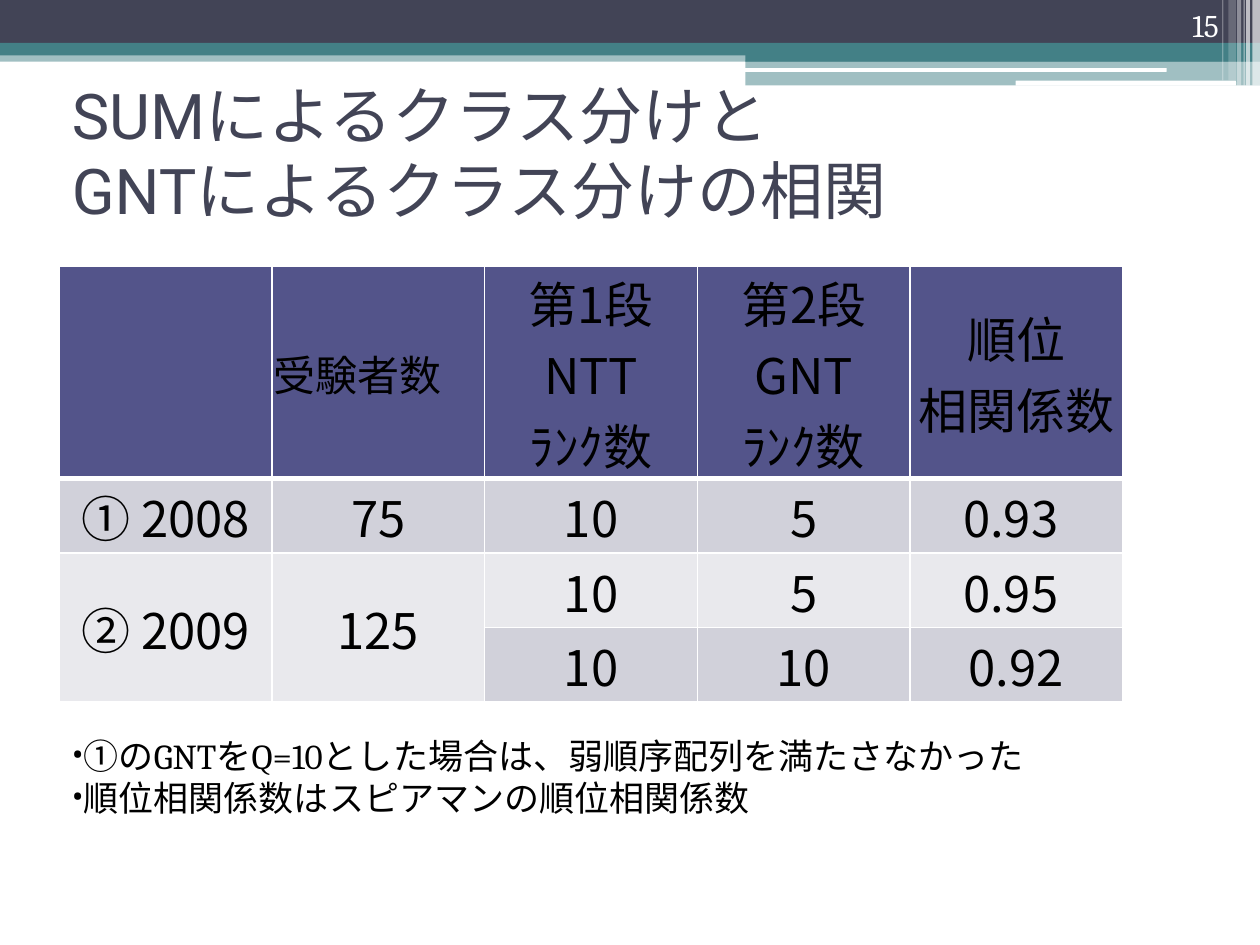
import pptx
import pptx.util
import pptx.dml.color
import pptx.enum.shapes
import pptx.enum.text
import pptx.oxml
import pptx.oxml.ns
import lxml.etree

Pt = pptx.util.Pt
RGBColor = pptx.dml.color.RGBColor
Shape = pptx.enum.shapes.MSO_SHAPE
Align = pptx.enum.text.PP_ALIGN
Anchor = pptx.enum.text.MSO_ANCHOR
qn = pptx.oxml.ns.qn

NAVY = RGBColor(0x42, 0x44, 0x56)
TEAL = RGBColor(0x43, 0x80, 0x86)
WHITE = RGBColor(0xFF, 0xFF, 0xFF)
BLACK = RGBColor(0, 0, 0)
HEADER = RGBColor(0x53, 0x54, 0x8A)
BAND_DARK = RGBColor(0xD1, 0xD1, 0xDA)
BAND_LIGHT = RGBColor(0xE9, 0xE9, 0xED)
ROW_FILLS = [HEADER, BAND_DARK, BAND_LIGHT, BAND_DARK]

TABLE_FONT = "Noto Sans CJK JP"
TITLE_FONT = "Roboto"
BODY_FONT = "Cambria"
EAST_ASIAN_FONTS = {TABLE_FONT: TABLE_FONT, TITLE_FONT: TITLE_FONT, BODY_FONT: TITLE_FONT}
ROW_HEIGHTS = [121.6, 42.5, 42.5, 42.5]
COLUMN_WIDTH = 121.5
CELLS = [
    ["", "受験者数\u3000", "第1段\nNTT\nﾗﾝｸ数", "第2段\nGNT\nﾗﾝｸ数", "順位\n相関係数"],
    ["① 2008", "75", "10", "5", "0.93 "],
    ["② 2009", "125", "10", "5", "0.95 "],
    ["", "", "10", "10", "0.92"],
]
BANDS = [
    (0, 28.8, 720, 6.5, TEAL, 50),
    (0, 0, 720, 24.5, NAVY, 100),
    (0, 24.5, 720, 7.2, TEAL, 100),
    (426, 28, 294, 7.2, TEAL, 100),
    (426, 34.5, 294, 14.4, TEAL, 50),
]
SLOTS = [(425.5, 38.9, 241.2, 2.2), (580.3, 46.1, 126, 2.9)]
STRIPES = [
    (715.7, 4.3, 49, 65),
    (712.1, 2.2, 49, 65),
    (710.6, 0.7, 49, 60),
    (707, 2.2, 49, 40),
    (702, 4.3, 46, 20),
    (698.4, 0.7, 46, 30),
]


def add_bar(slide, left, top, width, height, color, opacity=100, kind=Shape.RECTANGLE):
    shape = slide.shapes.add_shape(kind, Pt(left), Pt(top), Pt(width), Pt(height))
    shape.shadow.inherit = False
    shape.line.fill.background()
    shape.fill.solid()
    shape.fill.fore_color.rgb = color
    if opacity < 100:
        color_element = shape._element.spPr.find(qn("a:solidFill"))[0]
        alpha = lxml.etree.SubElement(color_element, qn("a:alpha"))
        alpha.set("val", str(opacity * 1000))


def format_text(text_frame, font_name, size, color, alignment):
    for paragraph in text_frame.paragraphs:
        paragraph.alignment = alignment
        for run in paragraph.runs:
            run.font.name = font_name
            run.font.size = Pt(size)
            run.font.bold = False
            run.font.color.rgb = color
            east_asian = pptx.oxml.parse_xml(
                f'<a:ea {pptx.oxml.ns.nsdecls("a")} typeface="{EAST_ASIAN_FONTS[font_name]}"/>'
            )
            run.font._element.find(qn("a:latin")).addnext(east_asian)


def add_text(slide, box, text, font_name, size, color,
             anchor=Anchor.TOP, alignment=Align.LEFT):
    shape = slide.shapes.add_textbox(*[Pt(length) for length in box])
    text_frame = shape.text_frame
    text_frame.word_wrap = True
    text_frame.vertical_anchor = anchor
    text_frame.text = text
    format_text(text_frame, font_name, size, color, alignment)
    return text_frame


def add_bullets(text_frame):
    for paragraph in text_frame.paragraphs:
        properties = paragraph._p.get_or_add_pPr()
        font = lxml.etree.SubElement(properties, qn("a:buFont"))
        font.set("typeface", TITLE_FONT)
        bullet = lxml.etree.SubElement(properties, qn("a:buChar"))
        bullet.set("char", "•")


def set_border(cell, side, width):
    line = lxml.etree.SubElement(cell._tc.get_or_add_tcPr(), qn(f"a:ln{side}"))
    line.set("w", str(Pt(width)))
    fill = lxml.etree.SubElement(line, qn("a:solidFill"))
    lxml.etree.SubElement(fill, qn("a:srgbClr")).set("val", str(WHITE))


def fill_cell(cell, row, column):
    widths = {"L": 1, "R": 1, "T": 3 if row == 1 else 1, "B": 3 if row == 0 else 1}
    for side, width in widths.items():
        set_border(cell, side, width)
    cell.fill.solid()
    cell.fill.fore_color.rgb = ROW_FILLS[row]
    cell.margin_left = cell.margin_right = cell.margin_top = Pt(0.7)
    cell.margin_bottom = 0
    cell.vertical_anchor = Anchor.MIDDLE
    cell.text_frame.text = CELLS[row][column]
    size = 24 if (row, column) == (0, 1) else 28
    format_text(cell.text_frame, TABLE_FONT, size, BLACK, Align.CENTER)


def add_rank_table(slide):
    rows, columns = len(CELLS), len(CELLS[0])
    table = slide.shapes.add_table(
        rows, columns, Pt(34), Pt(152), Pt(columns * COLUMN_WIDTH), Pt(sum(ROW_HEIGHTS))
    ).table
    table.first_row = False
    table.horz_banding = False
    for column in table.columns:
        column.width = Pt(COLUMN_WIDTH)
    for row, height in zip(table.rows, ROW_HEIGHTS):
        row.height = Pt(height)
    for row in range(rows):
        for column in range(columns):
            fill_cell(table.cell(row, column), row, column)
    for column in range(2):
        table.cell(2, column).merge(table.cell(3, column))


def add_header_bands(slide):
    for band in BANDS:
        add_bar(slide, *band)
    for slot in SLOTS:
        add_bar(slide, *slot, WHITE, kind=Shape.ROUNDED_RECTANGLE)
    for left, width, height, opacity in STRIPES:
        add_bar(slide, left, 0, width, height, WHITE, opacity)


def main():
    presentation = pptx.Presentation()
    presentation.slide_width = Pt(720)
    presentation.slide_height = Pt(540)
    slide = presentation.slides.add_slide(presentation.slide_layouts[6])
    add_header_bands(slide)
    add_text(slide, (34, 44.6, 648, 84.2), "SUMによるクラス分けと\vGNTによるクラス分けの相関",
             TITLE_FONT, 36, NAVY, Anchor.MIDDLE)
    add_rank_table(slide)
    add_text(slide, (643.7, 0, 59.8, 28.8), "15", BODY_FONT, 18, WHITE,
             Anchor.BOTTOM, Align.RIGHT)
    notes = add_text(
        slide, (34, 416.2, 646.6, 55.4),
        "①のGNTをQ=10とした場合は、弱順序配列を満たさなかった\n順位相関係数はスピアマンの順位相関係数",
        BODY_FONT, 20, BLACK)
    notes.auto_size = pptx.enum.text.MSO_AUTO_SIZE.SHAPE_TO_FIT_TEXT
    add_bullets(notes)
    presentation.save("out.pptx")


if __name__ == "__main__":
    main()
